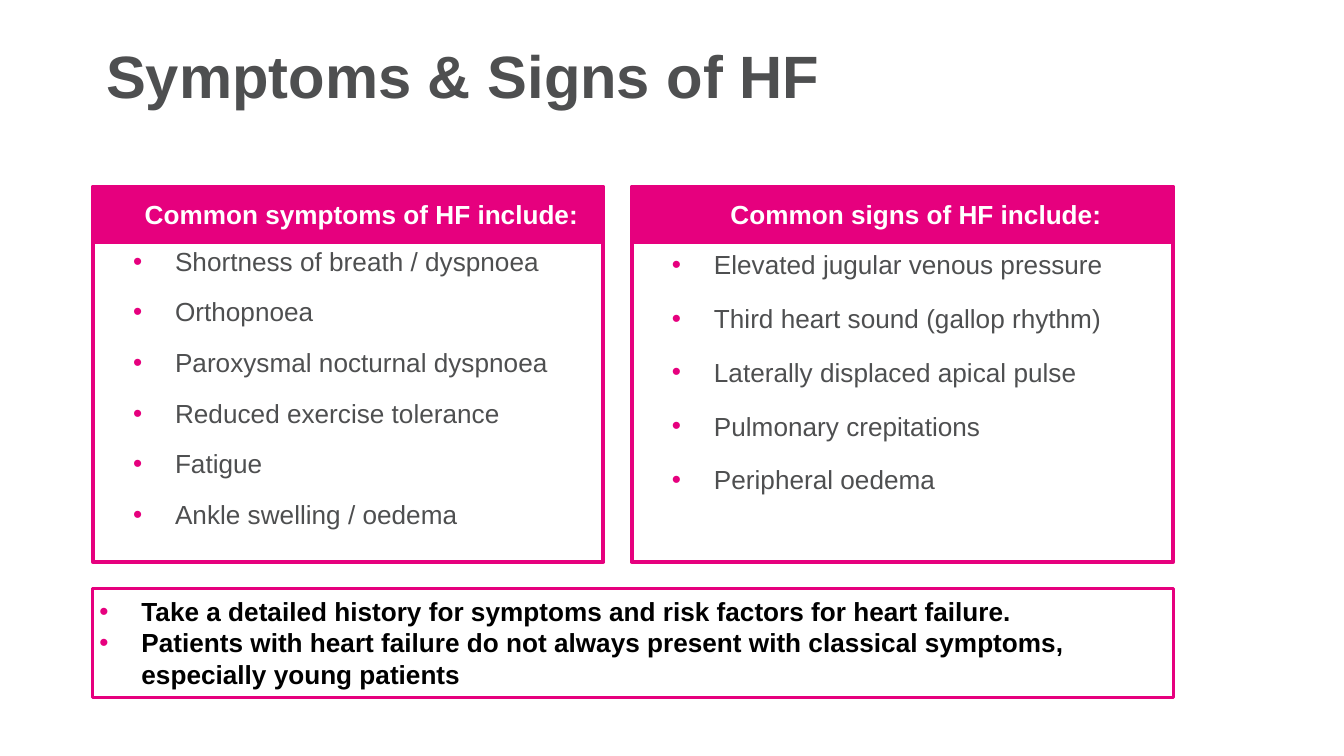
"""Build the slide on symptoms and signs of heart failure."""
from lxml import etree
from pptx import Presentation
from pptx.dml.color import RGBColor
from pptx.enum.shapes import MSO_SHAPE
from pptx.enum.text import MSO_ANCHOR as Anchor, PP_ALIGN as Align
from pptx.oxml.ns import qn
from pptx.util import Pt

PINK = RGBColor(0xE6, 0x00, 0x7E)
GREY = RGBColor(0x4E, 0x4F, 0x50)
WHITE = RGBColor(0xFF, 0xFF, 0xFF)
BLACK = RGBColor(0x00, 0x00, 0x00)

LEFT = 49.7
HEADER_TOP, HEADER_HEIGHT = 100, 29.6
LIST_HEIGHT = 171.4

PANELS = [
    (LEFT, 273.6, 0.9, "Common symptoms of HF include:", [
        "Shortness of breath / dyspnoea",
        "Orthopnoea",
        "Paroxysmal nocturnal dyspnoea",
        "Reduced exercise tolerance",
        "Fatigue",
        "Ankle swelling / oedema",
    ]),
    (338.4, 290.2, 1.0, "Common signs of HF include:", [
        "Elevated jugular venous pressure",
        "Third heart sound (gallop rhythm)",
        "Laterally displaced apical pulse",
        "Pulmonary crepitations",
        "Peripheral oedema",
    ]),
]
ADVICE = [
    "Take a detailed history for symptoms and risk factors for heart failure.",
    "Patients with heart failure do not always present with classical symptoms, "
    "especially young patients",
]


def add_box(left, top, width, height, line_width, insets):
    box = slide.shapes.add_shape(
        MSO_SHAPE.RECTANGLE, Pt(left), Pt(top), Pt(width), Pt(height))
    box.shadow.inherit = False
    box.fill.background()
    box.line.color.rgb = PINK
    box.line.width = Pt(line_width)
    frame = box.text_frame
    frame.word_wrap = True
    frame.vertical_anchor = Anchor.TOP
    frame.margin_left, frame.margin_right = Pt(insets[0]), Pt(insets[1])
    frame.margin_top = frame.margin_bottom = Pt(3.6)
    return box


def add_bullets(frame, items, color, bold, spacing, gap):
    for index, item in enumerate(items):
        paragraph = frame.paragraphs[0] if index == 0 else frame.add_paragraph()
        paragraph.text = item
        paragraph.alignment = Align.LEFT
        paragraph.line_spacing = spacing
        paragraph.space_before = Pt(gap if index else 0)
        paragraph.space_after = Pt(gap)
        properties = paragraph._p.get_or_add_pPr()
        properties.set("marL", str(Pt(22.5)))
        properties.set("indent", str(Pt(-22.5)))
        bullet_color = etree.SubElement(properties, qn("a:buClr"))
        etree.SubElement(bullet_color, qn("a:srgbClr"), val=str(PINK))
        etree.SubElement(properties, qn("a:buFont"), typeface="Arial")
        etree.SubElement(properties, qn("a:buChar"), char="•")
        font = paragraph.font
        font.name, font.size, font.bold = "Arial", Pt(14), bold
        font.color.rgb = color


presentation = Presentation()
presentation.slide_width, presentation.slide_height = Pt(720), Pt(405)
slide = presentation.slides.add_slide(presentation.slide_layouts[5])

title = slide.shapes.title
title.left, title.top, title.width, title.height = Pt(LEFT), Pt(21.6), Pt(606.2), Pt(78.4)
title.text_frame.vertical_anchor = Anchor.TOP
heading = title.text_frame.paragraphs[0]
heading.text = "Symptoms & Signs of HF"
heading.alignment = Align.LEFT
heading.line_spacing = 0.9
heading.font.name, heading.font.size, heading.font.bold = "Arial", Pt(32), True
heading.font.color.rgb = GREY

for left, width, spacing, caption, findings in PANELS:
    panel = add_box(left, HEADER_TOP + HEADER_HEIGHT, width, LIST_HEIGHT, 2.25, (21.6, 7.2))
    add_bullets(panel.text_frame, findings, GREY, False, spacing, 6)

    header = add_box(left, HEADER_TOP, width, HEADER_HEIGHT, 2.25, (21.6, 7.2))
    header.fill.solid()
    header.fill.fore_color.rgb = PINK
    header.text_frame.vertical_anchor = Anchor.MIDDLE
    label = header.text_frame.paragraphs[0]
    label.text = caption
    label.alignment = Align.CENTER
    label.font.name, label.font.size, label.font.bold = "Arial", Pt(14), True
    label.font.color.rgb = WHITE

advice_box = add_box(LEFT, 315.4, 578.9, 58.3, 1.75, (3.6, 3.6))
add_bullets(advice_box.text_frame, ADVICE, BLACK, True, 1.0, 0)

presentation.save("out.pptx")
